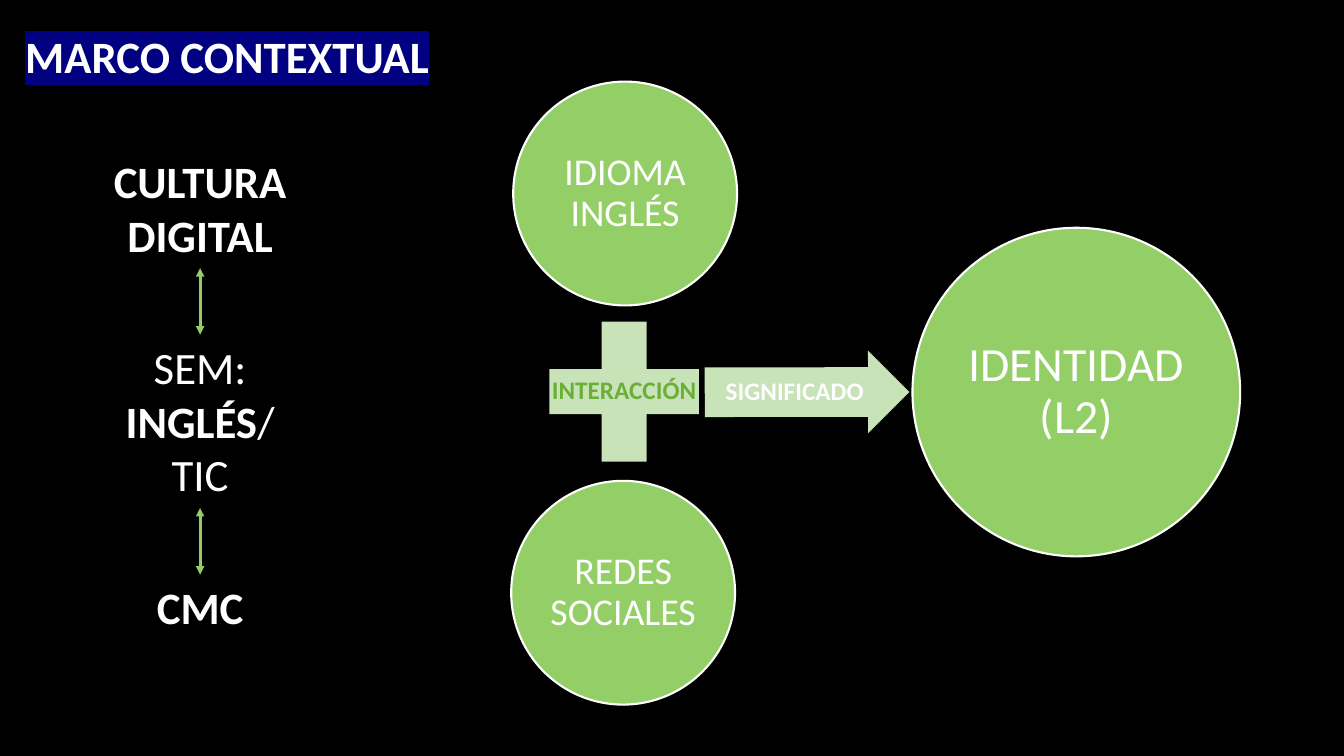
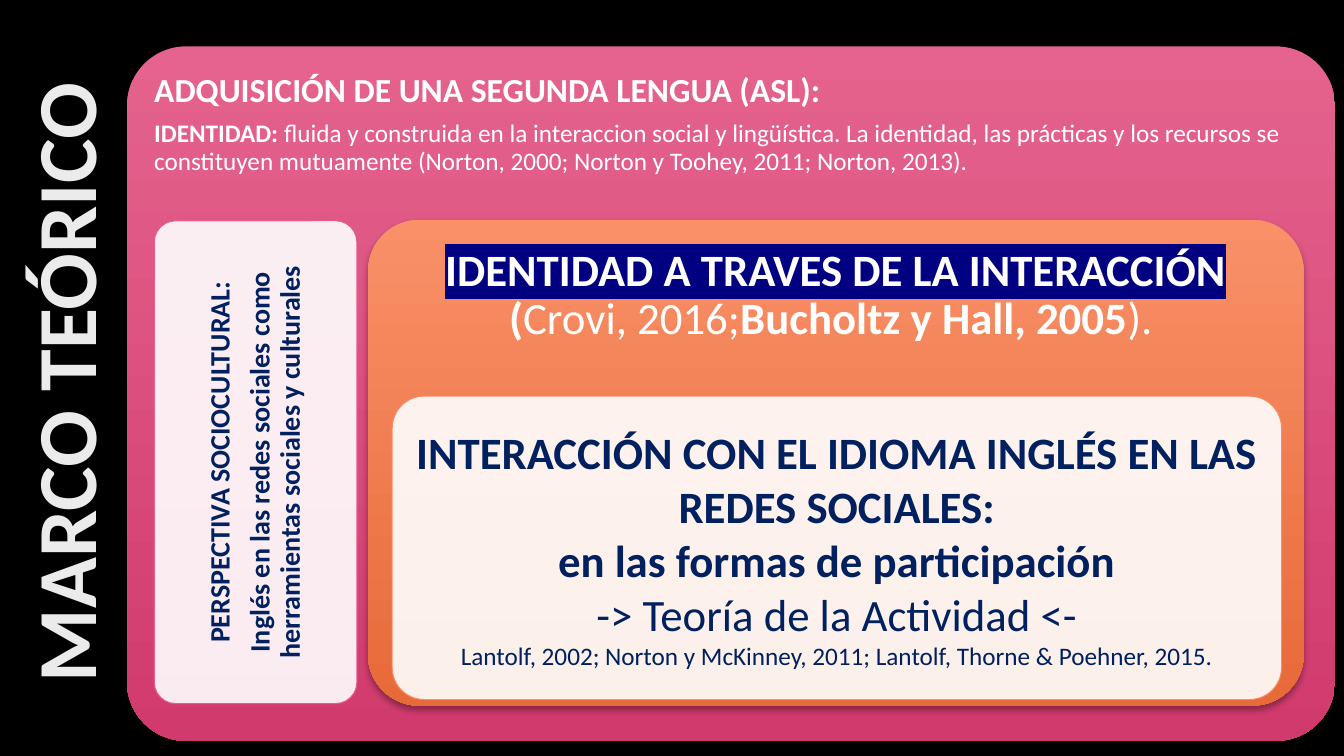
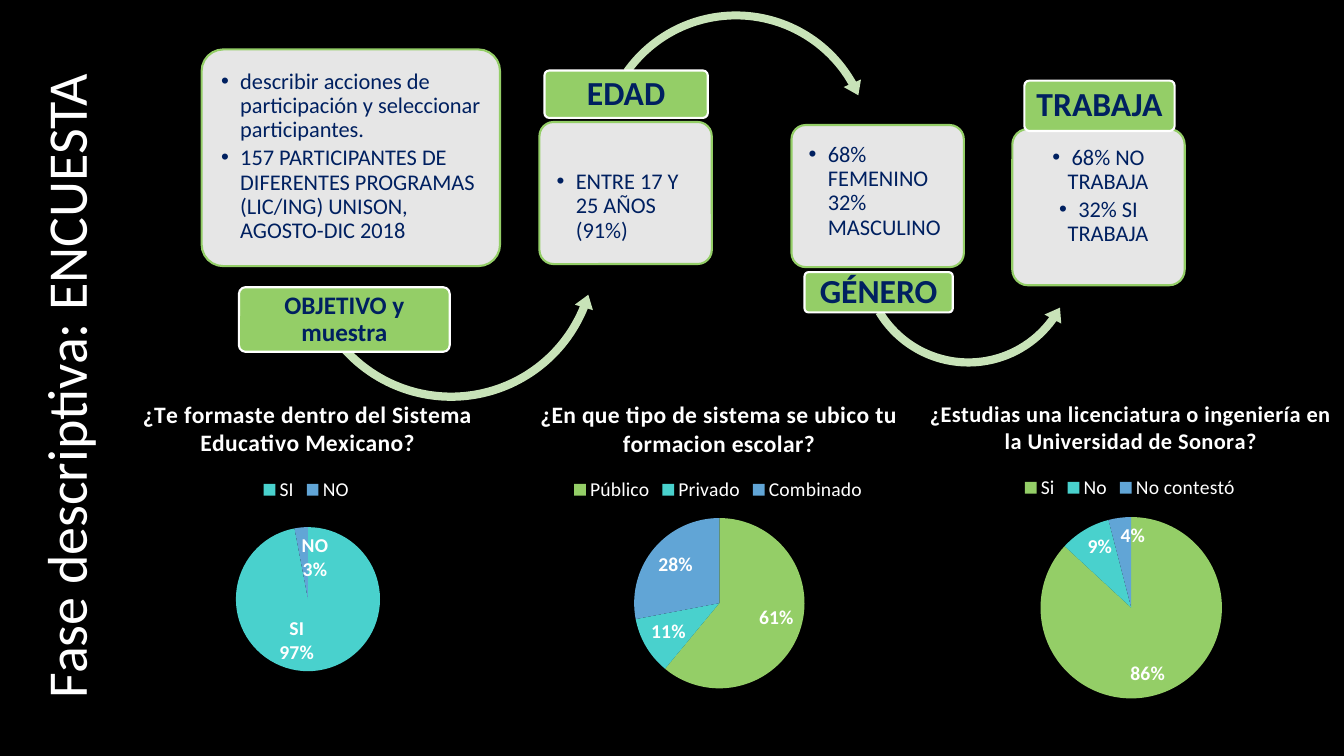
import dataclasses

import lxml.etree
import pptx
import pptx.chart.data
import pptx.dml.color
import pptx.enum.chart
import pptx.enum.shapes
import pptx.enum.text
import pptx.oxml
import pptx.oxml.ns
import pptx.util

Inches = pptx.util.Inches
Pt = pptx.util.Pt
qn = pptx.oxml.ns.qn
PRESET = pptx.enum.shapes.MSO_SHAPE
ALIGN = pptx.enum.text.PP_ALIGN
ANCHOR = pptx.enum.text.MSO_ANCHOR

FONT = "Calibri"
BLACK, WHITE, NAVY, HIGHLIGHT = "000000", "FFFFFF", "002060", "000080"
GREEN, PALE_GREEN, DARK_GREEN = "94CE67", "C8E3B8", "6CAF38"
PIE_COLORS = [GREEN, "49D1CD", "61A5D6"]


def rgb(value):
    return pptx.dml.color.RGBColor.from_string(value)


def add_xml(parent, tag, **attributes):
    child = lxml.etree.SubElement(parent, qn(tag))
    for key, value in attributes.items():
        child.set(key, str(value))
    return child


@dataclasses.dataclass
class Run:
    text: str
    bold: bool = None
    highlight: bool = False


@dataclasses.dataclass
class Para:
    runs: list
    size: float = None
    bold: bool = None


class Deck:
    def __init__(self):
        self.prs = pptx.Presentation()
        self.prs.slide_width = Inches(13.33)
        self.prs.slide_height = Inches(7.5)
        background = self.prs.slide_master.background.fill
        background.solid()
        background.fore_color.rgb = rgb(BLACK)

    def title_slide(self, text, box, size, color=WHITE, bold=False,
                    align=ALIGN.CENTER, rotation=270, highlight=False):
        self.slide = self.prs.slides.add_slide(self.prs.slide_layouts[5])
        title = self.slide.shapes.title
        title.left, title.top, title.width, title.height = map(Inches, box)
        title.rotation = rotation
        self.set_text(title, [Para([Run(text, highlight=highlight)])], size, color, bold,
                      align, spacing=1, insets=(0.1, 0.05, 0.1, 0.05))

    def set_text(self, shape, paras, size, color=WHITE, bold=False, align=ALIGN.CENTER,
                 anchor=ANCHOR.MIDDLE, spacing=0.9, after=0, bullets=False,
                 insets=(0.04, 0.04, 0.04, 0.04)):
        """Fill a shape; paras is a string or a list of strings and Para objects."""
        frame = shape.text_frame
        frame.word_wrap = True
        frame.auto_size = pptx.enum.text.MSO_AUTO_SIZE.NONE
        frame.vertical_anchor = anchor
        (frame.margin_left, frame.margin_top,
         frame.margin_right, frame.margin_bottom) = map(Inches, insets)
        for index, para in enumerate([paras] if isinstance(paras, str) else paras):
            if isinstance(para, str):
                para = Para([Run(para)])
            paragraph = frame.paragraphs[0] if index == 0 else frame.add_paragraph()
            paragraph.alignment = align
            paragraph.line_spacing = spacing
            paragraph.space_before = Pt(0)
            paragraph.space_after = Pt(after)
            if bullets:
                properties = paragraph._p.get_or_add_pPr()
                properties.set("marL", str(Inches(0.19)))
                properties.set("indent", str(-Inches(0.19)))
                add_xml(properties, "a:buFont", typeface="Arial")
                add_xml(properties, "a:buChar", char="•")
            paragraph.font.name = FONT
            paragraph.font.size = Pt(para.size or size)
            paragraph.font.bold = bold if para.bold is None else para.bold
            paragraph.font.color.rgb = rgb(color)
            for part in para.runs:
                run = paragraph.add_run()
                run.text = part.text
                if part.bold is not None:
                    run.font.bold = part.bold
                if part.highlight:
                    mark = add_xml(run._r.get_or_add_rPr(), "a:highlight")
                    add_xml(mark, "a:srgbClr", val=HIGHLIGHT)

    def text(self, box, paras, size, **style):
        label = self.slide.shapes.add_textbox(*map(Inches, box))
        self.set_text(label, paras, size, anchor=ANCHOR.TOP, spacing=1,
                      insets=(0.1, 0.05, 0.1, 0.05), **style)
        return label

    def shape(self, preset, box, fill, line=None, width=1.5, adjust=(), rotation=0,
              alpha=None):
        shape = self.slide.shapes.add_shape(preset, *map(Inches, box))
        shape.shadow.inherit = False
        shape.rotation = rotation
        for index, value in enumerate(adjust):
            shape.adjustments[index] = value
        shape.fill.solid()
        shape.fill.fore_color.rgb = rgb(fill)
        if alpha:
            color = shape._element.spPr.find(qn("a:solidFill"))[0]
            add_xml(color, "a:alpha", val=alpha * 1000)
        if line:
            shape.line.color.rgb = rgb(line)
            shape.line.width = Pt(width)
        else:
            shape.line.fill.background()
        return shape

    def gradient_panel(self, box, top, bottom, corner):
        panel = self.shape(PRESET.ROUNDED_RECTANGLE, box, top, adjust=[corner])
        panel.fill.gradient()
        panel.fill.gradient_angle = 270
        for stop, color, place in zip(panel.fill.gradient_stops, (top, bottom), (0, 1)):
            stop.color.rgb = rgb(color)
            stop.position = place
        effects = panel._element.spPr.find(qn("a:effectLst"))
        shadow = add_xml(effects, "a:outerShdw", blurRad=Pt(4), dist=Pt(3),
                         dir=90 * 60000, rotWithShape=0)
        add_xml(add_xml(shadow, "a:srgbClr", val=BLACK), "a:alpha", val=35000)
        return panel

    def white_panel(self, box, line, width=0.75, corner=0.105, rotation=0):
        return self.shape(PRESET.ROUNDED_RECTANGLE, box, WHITE, line, width, [corner],
                          rotation, alpha=90)

    def circle(self, box, text, size):
        self.set_text(self.shape(PRESET.OVAL, box, GREEN, WHITE), text, size)

    def double_arrow(self, upper, lower):
        arrow = self.slide.shapes.add_connector(
            pptx.enum.shapes.MSO_CONNECTOR.STRAIGHT, 0, 0, 0, 0)
        arrow.begin_connect(upper, 2)
        arrow.end_connect(lower, 0)
        arrow.line.color.rgb = rgb(GREEN)
        arrow.line.width = Pt(2)
        outline = arrow.line._get_or_add_ln()
        add_xml(outline, "a:headEnd", type="triangle")
        add_xml(outline, "a:tailEnd", type="triangle")
        add_xml(arrow._element.spPr, "a:effectLst")

    def card(self, box, paras, top=0.14, **style):
        self.set_text(self.white_panel(box, GREEN, 1.5, 0.1), paras, 16, NAVY,
                      anchor=ANCHOR.TOP, after=3, bullets=True,
                      insets=(0.13, top, 0.13, 0), **style)

    def tag(self, box, text, size=24):
        label = self.shape(PRESET.ROUNDED_RECTANGLE, box, GREEN, WHITE, adjust=[0.1])
        self.set_text(label, text, size, NAVY, True, insets=(0.05, 0.03, 0.05, 0.03))

    def layout(self, box, area, inner=False):
        """Manual chart layout: area is left, top[, width, height] on the slide."""
        layout = lxml.etree.Element(qn("c:layout"))
        manual = add_xml(layout, "c:manualLayout")
        if inner:
            add_xml(manual, "c:layoutTarget", val="inner")
        add_xml(manual, "c:xMode", val="edge")
        add_xml(manual, "c:yMode", val="edge")
        offsets = (box[0], box[1], 0, 0)
        for name, value, offset, whole in zip("xywh", area, offsets, box[2:] * 2):
            add_xml(manual, "c:" + name, val=round((value - offset) / whole, 4))
        return layout

    def pie(self, box, question, answers, pie_area, legend_at, title_size=16.8,
            hidden=None, show_names=False):
        data = pptx.chart.data.CategoryChartData()
        data.categories = list(answers)
        data.add_series("Series 1", list(answers.values()))
        chart = self.slide.shapes.add_chart(
            pptx.enum.chart.XL_CHART_TYPE.PIE, *map(Inches, box), data).chart
        chart.font.name = FONT
        chart.font.size = Pt(14)
        chart.font.color.rgb = rgb(WHITE)

        # Question
        chart.has_title = True
        chart.chart_title.include_in_layout = False
        heading = chart.chart_title.text_frame.paragraphs[0]
        heading.add_run().text = question
        heading.font.name = FONT
        heading.font.size = Pt(title_size)
        heading.font.bold = True
        heading.font.color.rgb = rgb(WHITE)
        heading._p.pPr.find(qn("a:defRPr")).set("spc", "40")

        # Slices and their labels
        plot = chart.plots[0]
        plot.vary_by_categories = True
        for index, color in enumerate(PIE_COLORS):
            fill = plot.series[0].points[index].format.fill
            fill.solid()
            fill.fore_color.rgb = rgb(color)
        plot.has_data_labels = True
        labels = plot.data_labels
        labels.number_format = '0"%"'
        labels.number_format_is_linked = False
        labels.show_value = True
        labels.show_percentage = False
        labels.show_category_name = show_names
        labels.position = pptx.enum.chart.XL_LABEL_POSITION.INSIDE_END
        labels.font.name = FONT
        labels.font.size = Pt(14)
        labels.font.bold = True
        labels.font.color.rgb = rgb(WHITE)
        if show_names:
            separator = lxml.etree.Element(qn("c:separator"))
            separator.text = "\n"
            labels._element.find(qn("c:showBubbleSize")).addnext(separator)

        # Legend and places
        chart.has_legend = True
        legend = chart.legend
        legend.position = pptx.enum.chart.XL_LEGEND_POSITION.TOP
        legend.include_in_layout = False
        legend.font.name = FONT
        legend.font.size = Pt(14)
        legend.font.color.rgb = rgb(WHITE)
        for old in legend._element.findall(qn("c:layout")):
            legend._element.remove(old)
        place = legend._element.find(qn("c:legendPos"))
        place.addnext(self.layout(box, legend_at))
        if hidden is not None:
            entry = lxml.etree.Element(qn("c:legendEntry"))
            add_xml(entry, "c:idx", val=hidden)
            add_xml(entry, "c:delete", val=1)
            place.addnext(entry)
        plot_area = chart._chartSpace.find(".//" + qn("c:plotArea"))
        for old in plot_area.findall(qn("c:layout")):
            plot_area.remove(old)
        plot_area.insert(0, self.layout(box, pie_area, inner=True))


def context_slide(deck):
    deck.title_slide("MARCO CONTEXTUAL", (0.15, 0.23, 5.14, 0.64), 32, bold=True,
                     align=ALIGN.LEFT, rotation=0, highlight=True)

    # Language plus networks lead to identity
    deck.circle((5.09, 0.81, 2.22, 2.22), "IDIOMA INGLÉS", 27)
    plus = deck.shape(PRESET.MATH_PLUS, (5.18, 2.94, 2.02, 1.89), PALE_GREEN)
    deck.set_text(plus, "INTERACCIÓN", 18, DARK_GREEN, True, insets=(0, 0, 0, 0))
    deck.circle((5.07, 4.77, 2.22, 2.22), "REDES SOCIALES", 27)
    meaning = deck.shape(PRESET.RIGHT_ARROW, (6.99, 3.48, 2.03, 0.82), PALE_GREEN,
                         adjust=[0.6, 0.5], rotation=359.9)
    deck.set_text(meaning, "SIGNIFICADO", 18, bold=True, insets=(0, 0, 0, 0))
    deck.circle((9.05, 2.26, 3.25, 3.26), "IDENTIDAD (L2)", 34)

    # Chain of contexts
    culture = deck.text((0.82, 1.48, 2.33, 1.18), "CULTURA DIGITAL", 32, bold=True)
    school = deck.text((1.11, 3.32, 1.75, 1.72),
                       ["SEM:", Para([Run("INGLÉS", True), Run("/TIC")])], 32)
    cmc = deck.text((1.11, 5.7, 1.75, 0.64), "CMC", 32, bold=True)
    deck.double_arrow(culture, school)
    deck.double_arrow(school, cmc)


def theory_slide(deck):
    deck.title_slide("MARCO TEÓRICO", (-2.98, 3.24, 7.21, 1.11), 60, "EBEBEB", True)

    # Second language acquisition
    acquisition = deck.gradient_panel((1.26, 0.46, 11.98, 6.89), "E5638E", "D13A6D", 0.085)
    deck.set_text(acquisition, [
        Para([Run("ADQUISICIÓN DE UNA SEGUNDA LENGUA (ASL):")], bold=True),
        Para([Run("IDENTIDAD: ", True),
              Run("fluida y construida en la interaccion social y lingüística. La identidad, "
                  "las prácticas y los recursos se constituyen mutuamente (Norton, 2000; "
                  "Norton y Toohey, 2011; Norton, 2013).")], 18),
    ], 24, align=ALIGN.LEFT, anchor=ANCHOR.TOP, after=8, insets=(0.1, 0.1, 0.1, 5.35))

    # Sociocultural perspective
    perspective = deck.white_panel((0.14, 3.58, 4.79, 2.01), "E45C8A", rotation=270)
    deck.set_text(perspective, [
        "PERSPECTIVA SOCIOCULTURAL:",
        "Inglés en las redes sociales como herramientas sociales y culturales",
    ], 20, NAVY, True, after=7, insets=(0.08,) * 4)

    # Identity through interaction
    identity = deck.gradient_panel((3.65, 2.18, 9.28, 4.82), "F99068", "E76A39", 0.105)
    deck.set_text(identity, [Para([
        Run("IDENTIDAD A TRAVES DE LA INTERACCIÓN ", True, True), Run("(", True),
        Run("Crovi, 2016;"), Run("Bucholtz y Hall, 2005", True), Run("). "),
    ])], 32, anchor=ANCHOR.TOP, insets=(0.13, 0.13, 0.13, 3.06))
    interaction = deck.white_panel((3.89, 3.93, 8.82, 3.01), "F98C61")
    deck.set_text(interaction, [
        "INTERACCIÓN CON EL IDIOMA INGLÉS EN LAS REDES SOCIALES:",
        "en las formas de participación",
        Para([Run("-> Teoría de la Actividad <-")], bold=False),
        Para([Run("Lantolf, 2002; Norton y McKinney, 2011; Lantolf, Thorne & Poehner, 2015.")],
             18, False),
    ], 32, NAVY, True, spacing=1, insets=(0.13,) * 4)


def survey_slide(deck):
    deck.title_slide("Fase descriptiva: ENCUESTA", (-2.79, 3.19, 6.86, 1.28), 40)

    # Answers
    deck.pie((0.55, 3.8, 5, 3), "¿Te formaste dentro del Sistema Educativo Mexicano?",
             {"Te formaste dentro del Sistema Educativo Mexicano": None, "SI": 97, "NO": 3},
             (2.34, 5.23, 1.43, 1.43), (2.55, 4.7), hidden=0, show_names=True)
    deck.pie((4.46, 3.8, 5.34, 3.17),
             "¿En que tipo de sistema se ubico tu formacion escolar?",
             {"Público": 61, "Privado": 11, "Combinado": 28},
             (6.29, 5.14, 1.69, 1.69), (5.63, 4.7))
    deck.pie((8.62, 3.8, 5.19, 3.26),
             "¿Estudias una licenciatura o ingeniería en la Universidad de Sonora?",
             {"Si": 86, "No": 9, "No contestó": 4},
             (10.32, 5.13, 1.8, 1.8), (10.1, 4.68), title_size=16)

    # Sample, age, gender and work, joined by curved arrows
    deck.card((2, 0.49, 2.96, 2.15), [
        "describir acciones de participación y seleccionar participantes.",
        "157 PARTICIPANTES DE DIFERENTES PROGRAMAS (LIC/ING) UNISON, AGOSTO-DIC 2018",
    ], align=ALIGN.LEFT)
    deck.shape(PRESET.LEFT_CIRCULAR_ARROW, (2.96, 1, 3.03, 3.03), PALE_GREEN,
               adjust=[0.027, 3.237, 13.277, 82.53, 0.031])
    deck.tag((2.37, 2.85, 2.09, 0.64), "OBJETIVO y muestra", 18)
    deck.card((5.35, 1.21, 1.71, 1.41), "ENTRE 17 Y 25 AÑOS (91%)", 0.44, align=ALIGN.LEFT)
    deck.shape(PRESET.CIRCULAR_ARROW, (5.88, 0.06, 2.84, 2.84), PALE_GREEN,
               adjust=[0.028, 3.465, 198.288, 129.263, 0.033])
    deck.tag((5.4, 0.7, 1.62, 0.47), "EDAD")
    deck.card((7.85, 1.24, 1.71, 1.41), "68% FEMENINO 32% MASCULINO", align=ALIGN.LEFT)
    deck.shape(PRESET.LEFT_CIRCULAR_ARROW, (8.48, 1.44, 2.25, 2.25), PALE_GREEN,
               adjust=[0.036, 4.448, 21.374, 89.416, 0.042])
    deck.tag((7.98, 2.7, 1.47, 0.4), "GÉNERO")
    deck.card((10.04, 1.28, 1.71, 1.55), ["68% NO TRABAJA", "32% SI TRABAJA"], 0.12)
    deck.tag((10.16, 0.8, 1.49, 0.5), "TRABAJA")


def main():
    deck = Deck()
    context_slide(deck)
    theory_slide(deck)
    survey_slide(deck)
    deck.prs.save("out.pptx")


if __name__ == "__main__":
    main()
